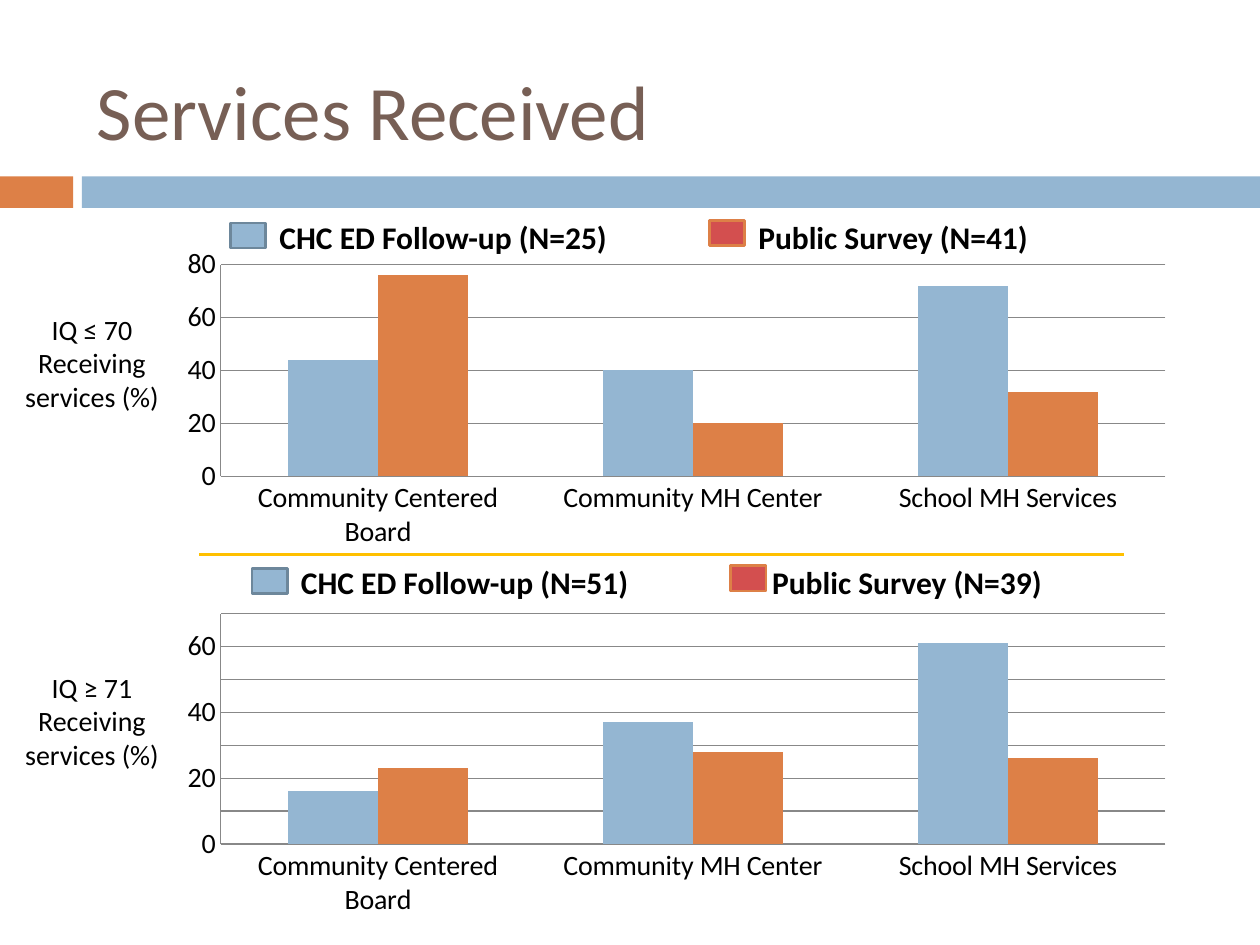
from dataclasses import dataclass

from lxml.etree import SubElement
from pptx import Presentation
from pptx.chart.data import CategoryChartData
from pptx.dml.color import RGBColor
from pptx.enum.chart import XL_CHART_TYPE as ChartType, XL_TICK_MARK as TickMark
from pptx.enum.shapes import MSO_CONNECTOR as Connector, MSO_SHAPE as Shape
from pptx.enum.text import MSO_ANCHOR as Anchor, PP_ALIGN as Align
from pptx.oxml import parse_xml
from pptx.oxml.ns import nsdecls, qn
from pptx.util import Inches, Pt


@dataclass(frozen=True)
class Theme:
    font: str = "Calibri"
    title: str = "775F55"
    text: str = "000000"
    blue: str = "94B6D2"
    blue_edge: str = "6D879B"
    orange: str = "DD8047"
    red: str = "C00000"
    red_opacity: int = 69
    divider: str = "FFC000"
    grid: str = "888888"
    title_size: int = 44
    legend_size: int = 18
    label_size: int = 16
    chart_size: int = 10


THEME = Theme()
SERVICES = ["Community Centered Board", "Community MH Center", "School MH Services"]


def rgb(value):
    return RGBColor.from_string(value)


def add_text(shapes, box, lines, size, color=THEME.text, bold=False,
             align=Align.LEFT, anchor=Anchor.TOP):
    frame = shapes.add_textbox(*map(Inches, box)).text_frame
    frame.word_wrap = True
    frame.vertical_anchor = anchor
    for index, line in enumerate(lines):
        paragraph = frame.add_paragraph() if index else frame.paragraphs[0]
        paragraph.alignment = align
        run = paragraph.add_run()
        run.text = line
        run.font.name = THEME.font
        run.font.size = Pt(size)
        run.font.bold = bold
        run.font.color.rgb = rgb(color)


def add_block(shapes, box, fill, edge=None, opacity=None):
    block = shapes.add_shape(Shape.RECTANGLE, *map(Inches, box))
    block.shadow.inherit = False
    block.fill.solid()
    block.fill.fore_color.rgb = rgb(fill)
    if opacity:
        color = block.fill._xPr.find(qn("a:solidFill"))[0]
        SubElement(color, qn("a:alpha"), val=str(opacity * 1000))
    if edge:
        block.line.color.rgb = rgb(edge)
        block.line.width = Pt(1.5)
    else:
        block.line.fill.background()


def add_legend(slide, left, top, followup_n, survey_n, survey_indent):
    shapes = slide.shapes.add_group_shape().shapes
    survey_left = left + 3.8
    add_block(shapes, (left, top + 0.09, 0.28, 0.2), THEME.blue, THEME.blue_edge)
    add_block(shapes, (survey_left, top + 0.07, 0.28, 0.2),
              THEME.red, THEME.orange, THEME.red_opacity)
    for text_left, label in (
            (left + 0.29, f"CHC ED Follow-up (N={followup_n})"),
            (survey_left + survey_indent, f"Public Survey (N={survey_n})")):
        add_text(shapes, (text_left, top, 3.4, 0.4), [label],
                 THEME.legend_size, bold=True)


def add_divider(slide, left, right, y):
    divider = slide.shapes.add_connector(
        Connector.STRAIGHT, *map(Inches, (left, y, right, y)))
    divider.line.color.rgb = rgb(THEME.divider)
    divider.line.width = Pt(2)
    SubElement(divider._element.spPr, qn("a:effectLst"))


def fix_plot_area(chart, box, plot_box):
    """Place the inner plot area at plot_box, given in slide inches."""
    left, top, width, height = box
    x, y, w, h = plot_box
    fractions = {"x": (x - left) / width, "y": (y - top) / height,
                 "w": w / width, "h": h / height}
    modes = "".join(f'<c:{axis}Mode val="edge"/>' for axis in "xy")
    places = "".join(f'<c:{key} val="{value:.4f}"/>' for key, value in fractions.items())
    layout = parse_xml(
        f'<c:layout {nsdecls("c")}><c:manualLayout><c:layoutTarget val="inner"/>'
        f'{modes}{places}</c:manualLayout></c:layout>')
    plot_area = chart._chartSpace.chart.plotArea
    for existing in plot_area.findall(qn("c:layout")):
        plot_area.remove(existing)
    plot_area.insert(0, layout)


def add_service_chart(slide, box, plot_box, followup, survey, top_value, step):
    data = CategoryChartData(number_format="0")
    data.categories = SERVICES
    data.add_series("Series 1", followup)
    data.add_series("Series 2", survey)
    chart = slide.shapes.add_chart(
        ChartType.COLUMN_CLUSTERED, *map(Inches, box), data).chart
    chart.has_legend = False
    chart.has_title = False
    chart.font.name = THEME.font
    chart.font.size = Pt(THEME.chart_size)
    chart.font.color.rgb = rgb(THEME.text)

    plot = chart.plots[0]
    plot.vary_by_categories = False
    plot.gap_width = 150
    plot.overlap = 0
    for series, color in zip(plot.series, (THEME.blue, THEME.orange)):
        series.format.fill.solid()
        series.format.fill.fore_color.rgb = rgb(color)

    values = chart.value_axis
    values.minimum_scale = 0
    values.maximum_scale = top_value
    values.major_unit = step
    values.has_major_gridlines = True
    values.tick_labels.number_format = "0"
    values.tick_labels.number_format_is_linked = False
    for axis in (chart.category_axis, values):
        axis.major_tick_mark = axis.minor_tick_mark = TickMark.NONE
        axis.tick_labels.font.size = Pt(THEME.label_size)
        axis.format.line.color.rgb = rgb(THEME.grid)
    values.major_gridlines.format.line.color.rgb = rgb(THEME.grid)
    fix_plot_area(chart, box, plot_box)


def main():
    deck = Presentation()
    deck.slide_width, deck.slide_height = Inches(10), Inches(7.5)
    slide = deck.slides.add_slide(deck.slide_layouts[6])
    shapes = slide.shapes

    add_block(shapes, (0, 1.4, 0.58, 0.25), THEME.orange)
    add_block(shapes, (0.65, 1.4, 9.35, 0.25), THEME.blue)
    add_text(shapes, (0.67, 0.33, 8.92, 1.08), ["Services Received"],
             THEME.title_size, THEME.title, anchor=Anchor.MIDDLE)

    for top, iq_range in ((2.43, "IQ ≤ 70"), (5.27, "IQ ≥ 71")):
        add_text(shapes, (-0.02, top, 1.5, 0.91),
                 [iq_range, "Receiving services (%)"],
                 THEME.label_size, align=Align.CENTER)

    add_legend(slide, 1.83, 1.68, 25, 41, survey_indent=0.29)
    add_legend(slide, 2, 4.42, 51, 39, survey_indent=0.23)
    add_divider(slide, 1.58, 8.92, 4.4)

    add_service_chart(slide, (1.33, 4.82, 8.08, 2.51), (1.75, 4.87, 7.5, 1.83),
                      (16, 37, 61), (23, 28, 26), top_value=70, step=10)
    add_service_chart(slide, (1.33, 1.92, 8.08, 2.49), (1.75, 2.1, 7.5, 1.68),
                      (44, 40, 72), (76, 20, 32), top_value=80, step=20)
    deck.save("out.pptx")


if __name__ == "__main__":
    main()
